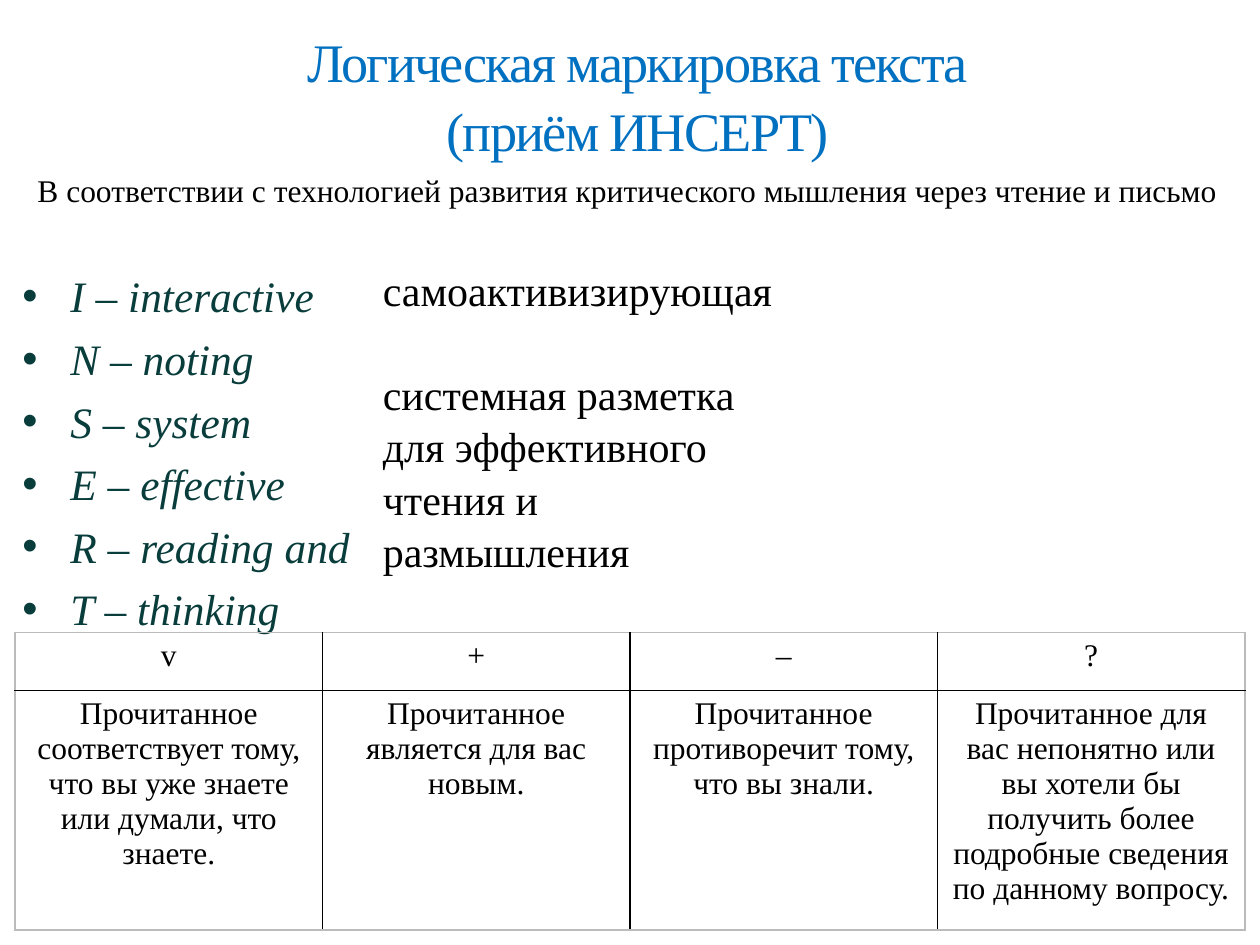
from lxml.etree import SubElement as Sub
from pptx import Presentation
from pptx.dml.color import RGBColor as RGB
from pptx.enum.text import MSO_ANCHOR as Anchor, PP_ALIGN as Align
from pptx.oxml.ns import qn
from pptx.util import Inches, Pt

deck = Presentation()
deck.slide_width, deck.slide_height = Inches(10), Inches(7.5)
slide = deck.slides.add_slide(deck.slide_layouts[6])

# The slide is a grid of 100 columns by 75 rows
unit = deck.slide_width // 100
black, blue, green, grey = "000000", "0070C0", "093D3C", "BBBBBB"


def color(code):
    return RGB.from_string(code)


def write(frame, lines, size, code, align=Align.LEFT, italic=False,
          gap=0, lead=None, bullet=False):
    frame.word_wrap = True
    for i, line in enumerate(lines):
        para = frame.paragraphs[0] if i == 0 else frame.add_paragraph()
        para.text = line
        para.alignment = align
        if i:
            para.space_before = Pt(gap)
        if lead:
            para.line_spacing = lead
        if bullet:
            props = para._p.get_or_add_pPr()
            props.set("marL", str(Inches(0.38)))
            props.set("indent", str(-Inches(0.38)))
            Sub(props, qn("a:buFont"), typeface="Arial")
            Sub(props, qn("a:buChar"), char="•")
        for run in para.runs:
            look = {"name": "Times New Roman", "size": Pt(size), "italic": italic}
            for key, value in look.items():
                setattr(run.font, key, value)
            run.font.color.rgb = color(code)


# Title, word list, translation and subtitle: place, lines, format
terms = ["I – interactive", "N – noting", "S – system", "E – effective",
         "R – reading and", "T – thinking"]
sense = ["самоактивизирующая", "системная разметка", "для эффективного",
         "чтения и", "размышления"]
intro = ("В соответствии с технологией развития критического мышления "
         "через чтение и письмо")
parts = [
    ((1.2, 1.3, 98.8, 12.3), ["Логическая маркировка текста\v(приём ИНСЕРТ)"],
     dict(size=31, code=blue, align=Align.CENTER, lead=1.06)),
    ((0.8, 20.9, 28.5, 29.3), terms,
     dict(size=24.8, code=green, italic=True, gap=6, bullet=True)),
    ((29.4, 21.3, 33.1, 25.7), sense,
     dict(size=24, code=black, gap=7, lead=0.8)),
    ((1.2, 13.1, 97.2, 4), [intro],
     dict(size=18, code=black, align=Align.CENTER)),
]
frames = []
for place, lines, style in parts:
    box = slide.shapes.add_textbox(*[int(n * unit) for n in place])
    write(box.text_frame, lines, **style)
    frames.append(box.text_frame)

# Title is centred in height and set tight
title, _, right, _ = frames
title.vertical_anchor = Anchor.MIDDLE
for run in title.paragraphs[0].runs:
    run.font._element.set("spc", "-100")
# The second term has no line of its own: leave one line free
right.paragraphs[1].space_before = Pt(36)

# Table of marks
marks = [
    ["v", "+", "–", "?"],
    ["Прочитанное соответствует тому, что вы уже знаете или думали, что знаете.",
     "Прочитанное является для вас новым.",
     "Прочитанное противоречит тому, что вы знали.",
     "Прочитанное для вас непонятно или вы хотели бы получить более "
     "подробные сведения по данному вопросу."],
]
rows, cols = len(marks), len(marks[0])
grid = slide.shapes.add_table(
    rows, cols, *[int(n * unit) for n in (1.2, 50.2, 97.6, 23.6)]).table
grid.first_row = grid.horz_banding = False
for row, high in zip(grid.rows, (4.6, 19)):
    row.height = int(high * unit)

for r, line in enumerate(marks):
    for c, text in enumerate(line):
        cell = grid.cell(r, c)
        write(cell.text_frame, [text], 18, black, Align.CENTER)
        # Outer edges are grey, inner ones black
        edges = {"lnL": c == 0, "lnR": c == cols - 1,
                 "lnT": r == 0, "lnB": r == rows - 1}
        for tag, outer in edges.items():
            edge = Sub(cell._tc.get_or_add_tcPr(), qn("a:" + tag), w=str(Pt(1)))
            fill = Sub(edge, qn("a:solidFill"))
            Sub(fill, qn("a:srgbClr"), val=grey if outer else black)
        cell.fill.background()

deck.save("out.pptx")
